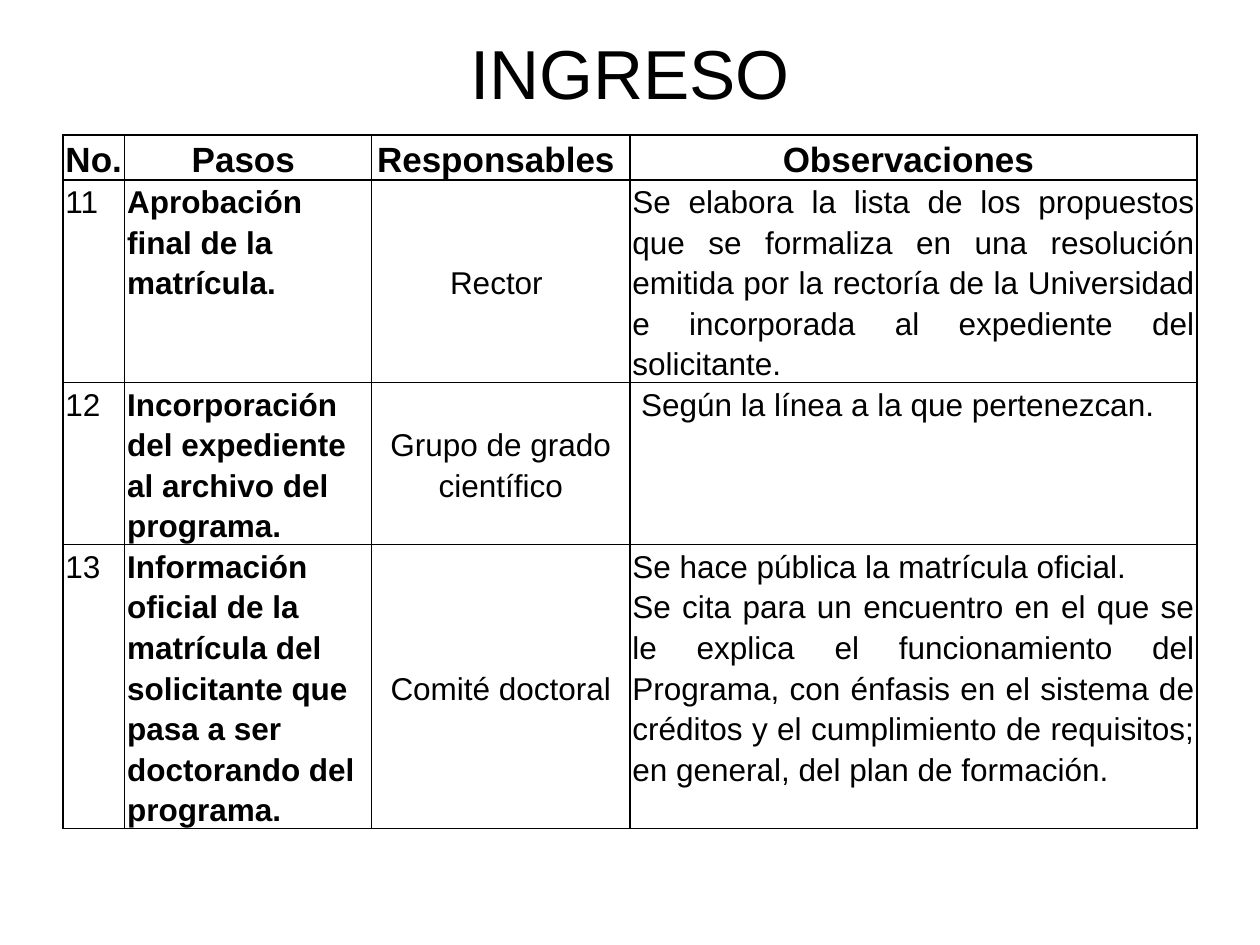
from lxml import etree
from pptx import Presentation
from pptx.dml.color import RGBColor
from pptx.enum.text import MSO_ANCHOR, PP_ALIGN
from pptx.oxml.ns import qn
from pptx.util import Inches, Pt

LEFT, CENTER, JUSTIFY = PP_ALIGN.LEFT, PP_ALIGN.CENTER, PP_ALIGN.JUSTIFY
TOP, MIDDLE = MSO_ANCHOR.TOP, MSO_ANCHOR.MIDDLE

COL_WIDTHS = [0.49, 1.96, 2.05, 4.5]
ROW_HEIGHTS = [0.26, 1.13, 0.84, 1.7]
ROWS = [
    ["No.", "Pasos ", "Responsables ", "Observaciones "],
    ["11", "Aprobación final de la matrícula.", "Rector ",
     "Se elabora la lista de los propuestos que se formaliza en una resolución "
     "emitida por la rectoría de la Universidad e incorporada al expediente del "
     "solicitante. "],
    ["12", "Incorporación del expediente al archivo del programa.",
     "Grupo de grado científico", " Según la línea a la que pertenezcan."],
    ["13", "Información oficial de la matrícula del solicitante que pasa a ser "
     "doctorando del programa.", "Comité doctoral",
     "Se hace pública la matrícula oficial.\n"
     "Se cita para un encuentro en el que se le explica el funcionamiento del "
     "Programa, con énfasis en el sistema de créditos y el cumplimiento de "
     "requisitos; en general, del plan de formación. "],
]
HEADER_ALIGN = [JUSTIFY, CENTER, CENTER, CENTER]
BODY_ALIGN = [JUSTIFY, LEFT, CENTER, JUSTIFY]


def color(value):
    return RGBColor.from_string(value)


class Deck:
    font = "Arial"
    ink = "000000"
    paper = "FFFFFF"

    def __init__(self, prs):
        self.s = prs.slides.add_slide(prs.slide_layouts[5])

    def style(self, p, size, align, bold=False):
        p.alignment = align
        p.font.name = self.font
        p.font.size = Pt(size)
        p.font.bold = bold
        p.font.color.rgb = color(self.ink)

    def title(self, text, x, y, w, h):
        sp = self.s.shapes.title
        sp.left, sp.top, sp.width, sp.height = map(Inches, (x, y, w, h))
        tf = sp.text_frame
        tf.text = text
        tf.vertical_anchor = MIDDLE
        self.style(tf.paragraphs[0], 39.6, CENTER)

    def borders(self, cell):
        tcPr = cell._tc.get_or_add_tcPr()
        for side in ("lnL", "lnR", "lnT", "lnB"):
            ln = etree.SubElement(tcPr, qn(f"a:{side}"), w=str(Pt(1)))
            fill = etree.SubElement(ln, qn("a:solidFill"))
            etree.SubElement(fill, qn("a:srgbClr"), val=self.ink)

    def cell(self, cell, text, size, align, bold):
        cell.text = text
        cell.margin_left = cell.margin_right = Inches(0.02)
        cell.margin_top = cell.margin_bottom = 0
        cell.vertical_anchor = MIDDLE if align == CENTER else TOP
        for p in cell.text_frame.paragraphs:
            self.style(p, size, align, bold)
            p.line_spacing = 1.15
        self.borders(cell)
        cell.fill.solid()
        cell.fill.fore_color.rgb = color(self.paper)

    def table(self, x, y):
        table = self.s.shapes.add_table(
            len(ROWS), len(COL_WIDTHS), Inches(x), Inches(y),
            Inches(sum(COL_WIDTHS)), Inches(sum(ROW_HEIGHTS))).table
        table.horz_banding = False
        table.first_row = False
        for col, width in zip(table.columns, COL_WIDTHS):
            col.width = Inches(width)
        for i, (row, height) in enumerate(zip(table.rows, ROW_HEIGHTS)):
            row.height = Inches(height)
            header = i == 0
            aligns = HEADER_ALIGN if header else BODY_ALIGN
            for j, (text, align) in enumerate(zip(ROWS[i], aligns)):
                self.cell(table.cell(i, j), text, 20 if header else 18,
                          align, header or j == 1)


def main():
    prs = Presentation()
    prs.slide_width, prs.slide_height = Inches(10), Inches(7.5)
    deck = Deck(prs)
    deck.title("INGRESO", 0.69, 0.36, 8.62, 0.42)
    deck.table(0.5, 1.07)
    prs.save("out.pptx")


if __name__ == "__main__":
    main()
